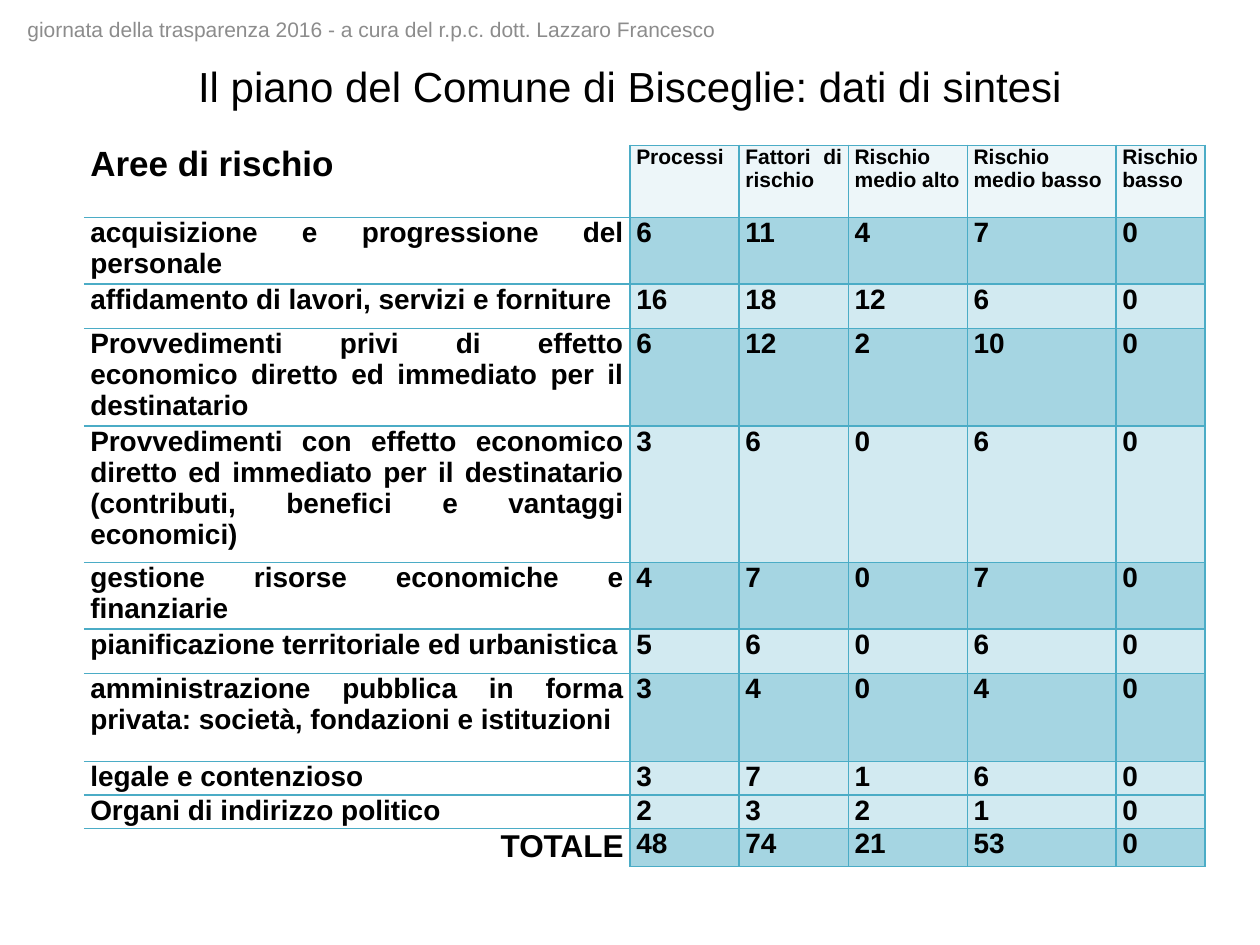
from pptx import Presentation
from pptx.dml.color import RGBColor
from pptx.enum import text as t
from pptx.oxml import parse_xml
from pptx.oxml.ns import nsdecls
from pptx.util import Pt

FONT = "Arial"
BLACK, GREY, WHITE = "000000", "8C8C8C", "FFFFFF"
LINE, PALE, LIGHT, DARK = "4BACC6", "EDF6F9", "D2EAF1", "A5D5E2"

HEADS = ["Aree di rischio", "Processi", "Fattori di rischio",
         "Rischio medio alto", "Rischio medio basso", "Rischio basso"]
# Each row: height, fill of the figures, area, figures
ROWS = [
    (38.2, DARK, "acquisizione e progressione del personale", (6, 11, 4, 7, 0)),
    (25.2, LIGHT, "affidamento di lavori, servizi e forniture", (16, 18, 12, 6, 0)),
    (56, DARK, "Provvedimenti privi di effetto economico diretto ed "
     "immediato per il destinatario", (6, 12, 2, 10, 0)),
    (77.8, LIGHT, "Provvedimenti con effetto economico diretto ed immediato per il "
     "destinatario (contributi, benefici e vantaggi economici)", (3, 6, 0, 6, 0)),
    (38.2, DARK, "gestione risorse economiche e finanziarie", (4, 7, 0, 7, 0)),
    (25.2, LIGHT, "pianificazione territoriale ed urbanistica", (5, 6, 0, 6, 0)),
    (50.4, DARK, "amministrazione pubblica in forma privata: società, "
     "fondazioni e istituzioni", (3, 4, 0, 4, 0)),
    (19.2, LIGHT, "legale e contenzioso", (3, 7, 1, 6, 0)),
    (19.2, LIGHT, "Organi di indirizzo politico", (2, 3, 2, 1, 0)),
    (21.6, DARK, "TOTALE", (48, 74, 21, 53, 0)),
]
HEAD_HIGH = 41.2
WIDTHS = [312, 62.4, 62.4, 68, 85, 51]


def color(code):
    return RGBColor.from_string(code)


def style(par, size, code, align, bold=False):
    par.alignment = align
    for run in par.runs:
        font = run.font
        font.name, font.size, font.bold = FONT, Pt(size), bold
        font.color.rgb = color(code)


def add_text(slide, box, words, size, code, align):
    frame = slide.shapes.add_textbox(*map(Pt, box)).text_frame
    frame.word_wrap = True
    frame.vertical_anchor = t.MSO_ANCHOR.MIDDLE
    frame.text = words
    style(frame.paragraphs[0], size, code, align)


def set_edges(cell, shown):
    """Draw the sides named in shown and hide the others."""
    props = cell._tc.get_or_add_tcPr()
    for place, side in enumerate("LRTB"):
        paint = (f'<a:solidFill><a:srgbClr val="{LINE}"/></a:solidFill>'
                 if side in shown else "<a:noFill/>")
        props.insert(place, parse_xml(
            f'<a:ln{side} {nsdecls("a")} w="{Pt(1)}">{paint}</a:ln{side}>'))


def fill_cell(cell, words, size, fill, align, edges):
    cell.margin_left = cell.margin_right = Pt(3.6)
    cell.margin_top = cell.margin_bottom = 0
    cell.fill.solid()
    cell.fill.fore_color.rgb = color(fill)
    cell.text_frame.text = words
    style(cell.text_frame.paragraphs[0], size, BLACK, align, True)
    set_edges(cell, edges)


def add_risks(slide, box):
    lines = [(HEAD_HIGH, PALE, HEADS[0], HEADS[1:])] + ROWS
    last = len(lines) - 1
    frame = slide.shapes.add_table(len(lines), len(HEADS), *map(Pt, box))
    table = frame.table
    for col, wide in zip(table.columns, WIDTHS):
        col.width = Pt(wide)
    for r, (high, fill, area, values) in enumerate(lines):
        table.rows[r].height = Pt(high)
        # Area names: open on the left and at both ends of the column
        align = t.PP_ALIGN.RIGHT if r == last else t.PP_ALIGN.JUSTIFY
        edges = "R" + ("T" if r else "") + ("B" if r < last else "")
        size = {0: 20, last: 18}.get(r, 16)
        fill_cell(table.cell(r, 0), area, size, WHITE, align, edges)
        # Heads and figures: full grid
        for c, value in enumerate(values, 1):
            fill_cell(table.cell(r, c), str(value), 16 if r else 12, fill,
                      t.PP_ALIGN.JUSTIFY, "LRTB")


def main():
    deck = Presentation()
    deck.slide_width, deck.slide_height = Pt(720), Pt(540)
    slide = deck.slides.add_slide(deck.slide_layouts[6])
    # Table
    add_risks(slide, (48, 83, sum(WIDTHS), HEAD_HIGH + sum(row[0] for row in ROWS)))
    # Title
    add_text(slide, (36, 32, 648, 34),
             "Il piano del Comune di Bisceglie: dati di sintesi",
             24, BLACK, t.PP_ALIGN.CENTER)
    # Header line
    add_text(slide, (8.6, 1.8, 585, 30),
             "giornata della trasparenza 2016 - a cura del r.p.c. dott. Lazzaro Francesco",
             12, GREY, t.PP_ALIGN.LEFT)
    deck.save("out.pptx")


if __name__ == "__main__":
    main()
